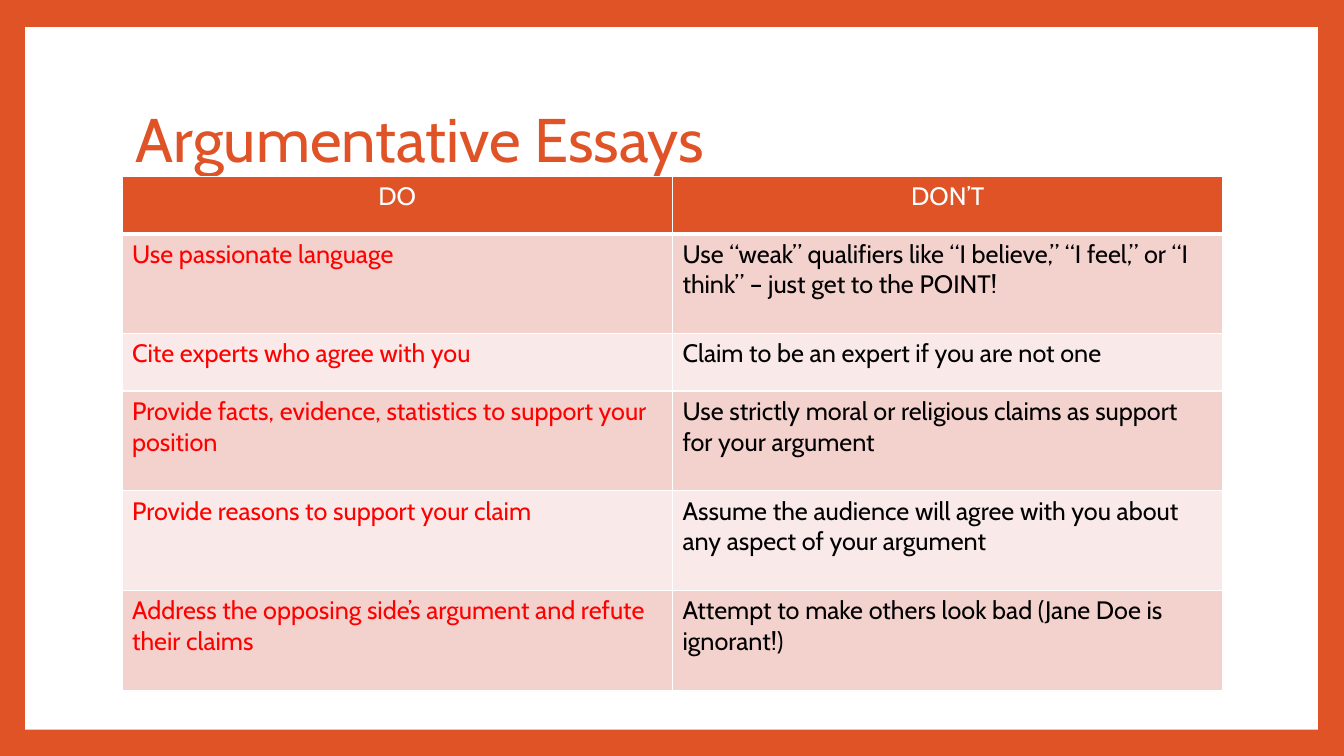
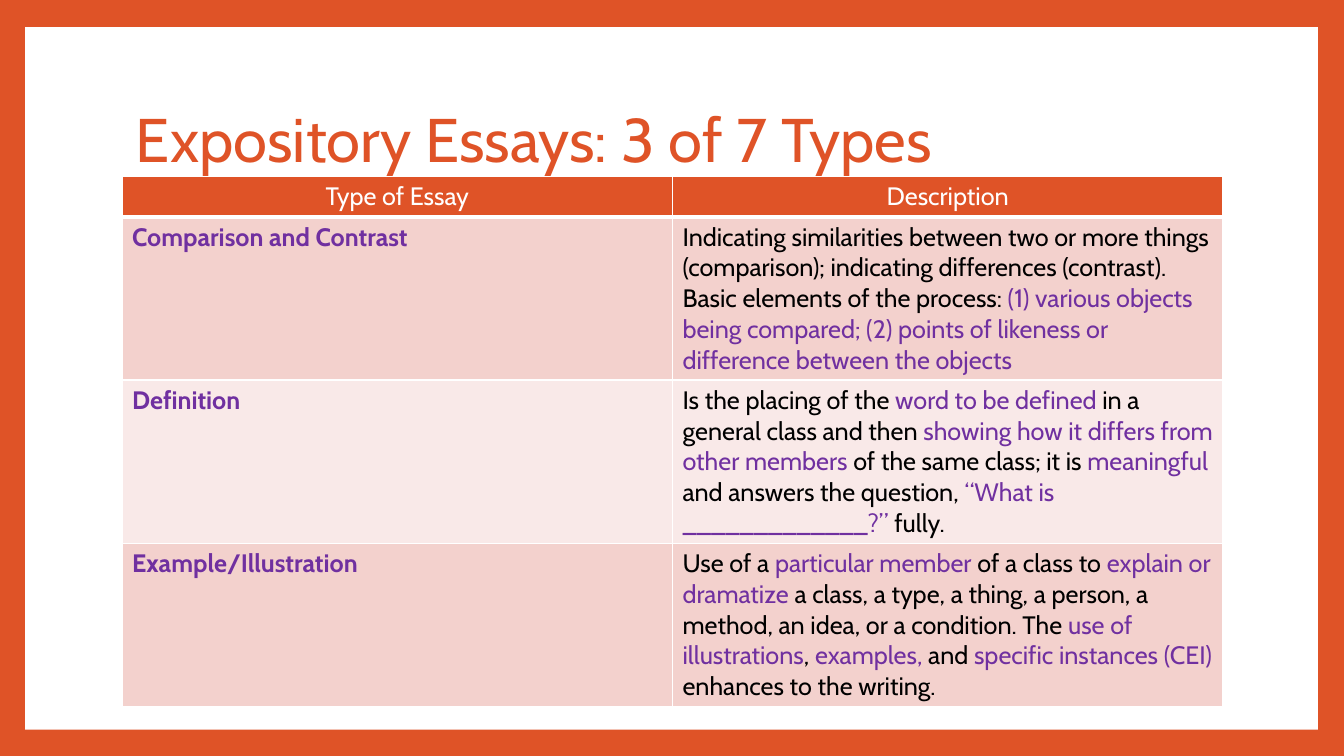
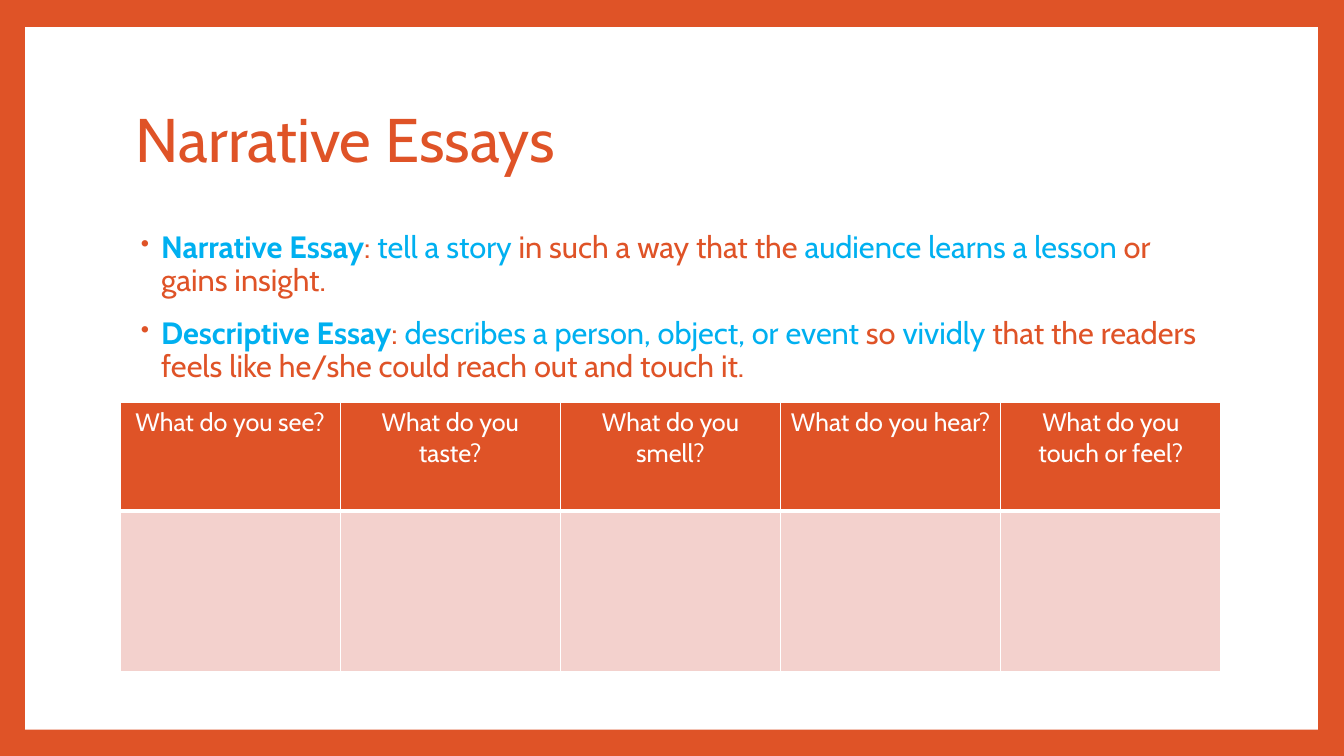
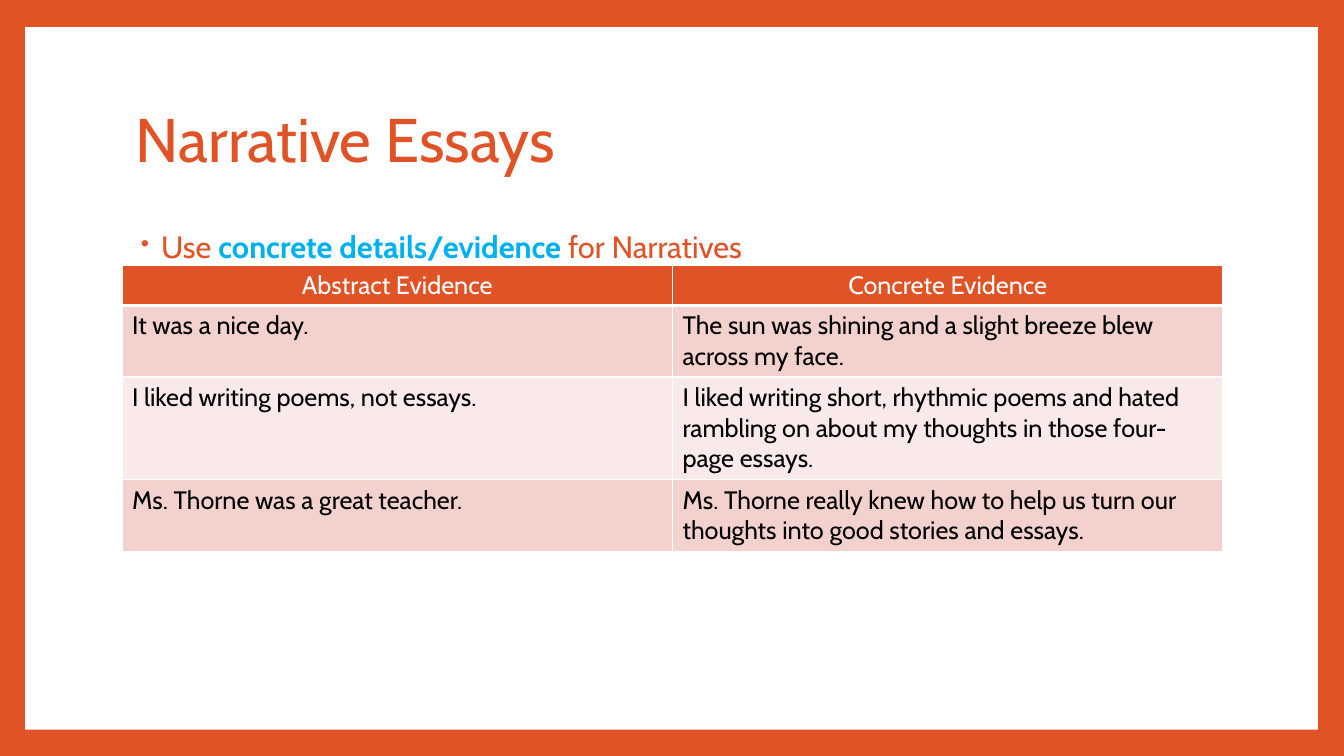
from collections import namedtuple

from pptx import Presentation
from pptx import util as u
from pptx.dml.color import RGBColor
from pptx.enum import shapes, text
from pptx.oxml.ns import qn
from lxml import etree

COLOURS = {
    "orange": "DF5327", "white": "FFFFFF", "black": "000000",
    "red": "FF0000", "purple": "7030A0", "blue": "00B0F0",
    "band_dark": "F3D1CD", "band_light": "F9E9E8",
}
FONT = "Cabin"
PANEL = (0.25, 0.27, 12.82, 6.97)
TITLE = (1.25, 0.67, 10.8, 1.48)
BODY = (1.25, 2.25, 10.8, 4.42)
TABLE_WIDTH = 10.92

Span = namedtuple("Span", "words colour bold", defaults=(False,))


def rgb(name):
    return RGBColor.from_string(COLOURS[name])


def inches(box):
    return [u.Inches(length) for length in box]


def write(para, content, size, colour):
    """Fill a paragraph from a string, a Span or a list of them; strings take the given colour."""
    for part in content if isinstance(content, list) else [content]:
        span = part if isinstance(part, Span) else Span(part, colour)
        run = para.add_run()
        run.text = span.words
        run.font.name = FONT
        run.font.size = u.Pt(size)
        run.font.bold = span.bold
        run.font.color.rgb = rgb(span.colour)


def add_bullet(para):
    props = para._p.get_or_add_pPr()
    props.set("marL", str(u.Inches(0.25)))
    props.set("indent", str(u.Inches(-0.2)))
    colour = etree.SubElement(props, qn("a:buClr"))
    etree.SubElement(colour, qn("a:srgbClr"), val=COLOURS["orange"])
    etree.SubElement(props, qn("a:buSzPct"), val="80000")
    etree.SubElement(props, qn("a:buChar"), char="•")


def add_borders(cell, bottom):
    props = cell._tc.get_or_add_tcPr()
    for side, points in (("L", 1), ("R", 1), ("T", 1), ("B", bottom)):
        line = etree.SubElement(props, qn("a:ln" + side), w=str(u.Pt(points)))
        fill = etree.SubElement(line, qn("a:solidFill"))
        etree.SubElement(fill, qn("a:srgbClr"), val=COLOURS["white"])


def add_text_box(slide, box):
    frame = slide.shapes.add_textbox(*inches(box)).text_frame
    frame.word_wrap = True
    return frame


def start_slide(deck, title):
    """Add a slide with the orange surround, the white panel and the title."""
    slide = deck.slides.add_slide(deck.slide_layouts[6])
    panel = slide.shapes.add_shape(shapes.MSO_SHAPE.RECTANGLE, *inches(PANEL))
    panel.shadow.inherit = False
    panel.fill.solid()
    panel.fill.fore_color.rgb = rgb("white")
    panel.line.fill.background()
    frame = add_text_box(slide, TITLE)
    frame.vertical_anchor = text.MSO_ANCHOR.MIDDLE
    para = frame.paragraphs[0]
    para.line_spacing = 0.9
    write(para, title, 44, "orange")
    return slide


def add_bullets(slide, box, items):
    frame = add_text_box(slide, box)
    for index, item in enumerate(items):
        para = frame.add_paragraph() if index else frame.paragraphs[0]
        para.line_spacing = 0.9
        para.space_before = u.Pt(14)
        add_bullet(para)
        write(para, item, 22, "orange")


def add_banded_table(slide, left, top, heights, rows):
    """Place a table of equal columns: an orange header over alternating bands."""
    count = len(rows[0])
    frame = slide.shapes.add_table(
        len(rows), count, *inches((left, top, TABLE_WIDTH, sum(heights))))
    table = frame.table
    for column in table.columns:
        column.width = u.Inches(TABLE_WIDTH / count)
    for index, (height, contents) in enumerate(zip(heights, rows)):
        table.rows[index].height = u.Inches(height)
        header = index == 0
        band = "orange" if header else "band_dark" if index % 2 else "band_light"
        for cell, content in zip(table.rows[index].cells, contents):
            add_borders(cell, 3 if header else 1)
            cell.fill.solid()
            cell.fill.fore_color.rgb = rgb(band)
            para = cell.text_frame.paragraphs[0]
            if header:
                para.alignment = text.PP_ALIGN.CENTER
            if content:
                write(para, content, 18, "white" if header else "black")


def argumentative_slide(deck):
    slide = start_slide(deck, "Argumentative Essays")
    advice = [
        ("Use passionate language",
         "Use “weak” qualifiers like “I believe,” “I feel,” or “I think” – just get to the POINT!"),
        ("Cite experts who agree with you",
         "Claim to be an expert if you are not one"),
        ("Provide facts, evidence, statistics to support your position",
         "Use strictly moral or religious claims as support for your argument"),
        ("Provide reasons to support your claim",
         "Assume the audience will agree with you about any aspect of your argument"),
        ("Address the opposing side’s argument and refute their claims",
         "Attempt to make others look bad (Jane Doe is ignorant!)"),
    ]
    rows = [("DO", "DON’T")] + [(Span(do, "red"), dont) for do, dont in advice]
    add_banded_table(slide, 1.21, 1.75, [0.57, 0.99, 0.57, 0.99, 0.99, 0.99], rows)


def expository_slide(deck):
    slide = start_slide(deck, "Expository Essays: 3 of 7 Types")

    def key(words):
        return Span(words, "purple")

    types = [
        ("Comparison and Contrast", [
            "Indicating similarities between two or more things (comparison); "
            "indicating differences (contrast). Basic elements of the process: ",
            key("(1) various objects being compared; (2) points of likeness or "
                "difference between the objects")]),
        ("Definition", [
            "Is the placing of the ", key("word to be defined"),
            " in a general class and then ",
            key("showing how it differs from other members"),
            " of the same class; it is ", key("meaningful "),
            "and answers the question, ", key("“What is _____________?” "), "fully."]),
        ("Example/Illustration", [
            "Use of a ", key("particular member "), "of a class to ",
            key("explain or dramatize "),
            "a class, a type, a thing, a person, a method, an idea, or a condition. The ",
            key("use of illustrations"), ", ", key("examples,"), " and ",
            key("specific instances (CEI) "), "enhances to the writing."]),
    ]
    rows = [("Type of Essay", "Description")]
    rows += [(Span(name, "purple", True), description) for name, description in types]
    add_banded_table(slide, 1.21, 1.75, [0.4, 1.62, 1.62, 1.62], rows)


def senses_slide(deck):
    slide = start_slide(deck, "Narrative Essays")
    add_bullets(slide, BODY, [
        [Span("Narrative Essay", "blue", True), ": ", Span("tell a story ", "blue"),
         "in such a way that the ", Span("audience learns a lesson ", "blue"),
         "or gains insight."],
        [Span("Descriptive Essay", "blue", True), ": ",
         Span("describes a person, object, or event ", "blue"), "so ",
         Span("vividly", "blue"),
         " that the readers feels like he/she could reach out and touch it."],
    ])
    senses = ["see", "taste", "smell", "hear", "touch or feel"]
    questions = [f"What do you {sense}?" for sense in senses]
    add_banded_table(slide, 1.19, 3.99, [1.08, 1.59], [questions, [""] * len(senses)])


def evidence_slide(deck):
    slide = start_slide(deck, "Narrative Essays")
    add_bullets(slide, BODY, [
        ["Use ", Span("concrete details/evidence ", "blue", True), "for Narratives"],
    ])
    add_banded_table(slide, 1.21, 2.63, [0.4, 0.71, 1.02, 0.71], [
        ("Abstract Evidence", "Concrete Evidence"),
        ("It was a nice day.",
         "The sun was shining and a slight breeze blew across my face."),
        ("I liked writing poems, not essays.",
         "I liked writing short, rhythmic poems and hated rambling on about my "
         "thoughts in those four-page essays."),
        ("Ms. Thorne was a great teacher.",
         "Ms. Thorne really knew how to help us turn our thoughts into good stories and essays."),
    ])


def main():
    deck = Presentation()
    deck.slide_width, deck.slide_height = inches((13.33, 7.5))
    surround = deck.slide_master.background.fill
    surround.solid()
    surround.fore_color.rgb = rgb("orange")
    for build in (argumentative_slide, expository_slide, senses_slide, evidence_slide):
        build(deck)
    deck.save("out.pptx")


if __name__ == "__main__":
    main()
